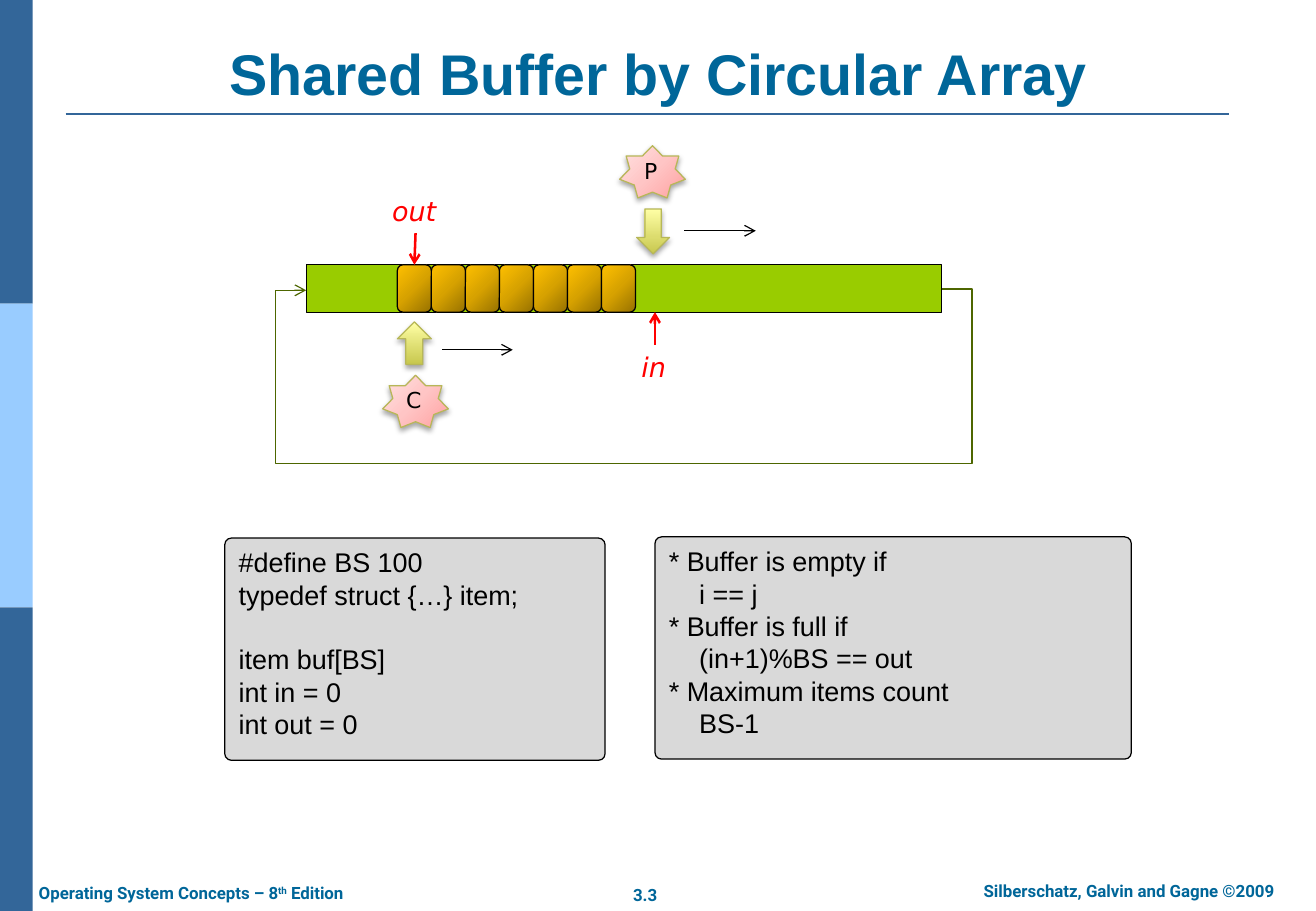
import pptx
import pptx.util
import pptx.dml.color
import pptx.enum.shapes
import pptx.enum.text
import pptx.oxml
import pptx.oxml.ns

Inches, Pt = pptx.util.Inches, pptx.util.Pt
RGB = pptx.dml.color.RGBColor.from_string
MSO = pptx.enum.shapes.MSO_SHAPE
CONN = pptx.enum.shapes.MSO_CONNECTOR
ALIGN = pptx.enum.text.PP_ALIGN
ANCHOR = pptx.enum.text.MSO_ANCHOR
FIT = pptx.enum.text.MSO_AUTO_SIZE
qn = pptx.oxml.ns.qn

THEME = {
    "navy": "336699", "sky": "99CCFF", "buffer": "99CC00", "panel": "D9D9D9",
    "black": "000000", "loop": "4D6600", "olive": "B7B758", "red": "FF0000",
    # Gradients: counter-clockwise angle, then (position, colour) stops
    "pink": (135, [(0, "FFA0A0"), (50, "FFC5C5"), (100, "FFE3E3")]),
    "lime": (90, [(0, "C7C74E"), (100, "FFFFA5")]),
    "gold": (135, [(0, "977200"), (50, "D7A200"), (100, "FFC000")]),
    "title": ({"name": "Arial", "size": Pt(34), "bold": True}, "006699"),
    "footer": ({"name": "Roboto", "size": Pt(10), "bold": True}, "006699"),
    "actor": ({"name": "DejaVu Sans", "size": Pt(13)}, "000000"),
    "index": ({"name": "DejaVu Sans", "size": Pt(16), "italic": True}, "FF0000"),
    "code": ({"name": "Arial", "size": Pt(16)}, "000000"),
}

prs = pptx.Presentation()
prs.slide_width, prs.slide_height = Inches(10.83), Inches(7.5)
s = prs.slides.add_slide(prs.slide_layouts[5])


def add_shape(kind, at, fill, line=None, shadow=False):
    sp = s.shapes.add_shape(kind, *map(Inches, at))
    sp.shadow.inherit = False
    paint = THEME[fill]
    if isinstance(paint, tuple):
        sp.fill.gradient()
        sp.fill.gradient_angle = paint[0]
        stops = sp._element.spPr.find(".//" + qn("a:gsLst"))
        for old in list(stops):
            stops.remove(old)
        for pos, color in paint[1]:
            gs = pptx.oxml.ns and stops.makeelement(qn("a:gs"), {"pos": str(pos * 1000)})
            gs.append(gs.makeelement(qn("a:srgbClr"), {"val": color}))
            stops.append(gs)
    else:
        sp.fill.solid()
        sp.fill.fore_color.rgb = RGB(paint)
    if line:
        sp.line.color.rgb = RGB(THEME[line])
        sp.line.width = Pt(0.75)
    else:
        sp.line.fill.background()
    if shadow:
        sp._element.spPr.find(qn("a:effectLst")).append(pptx.oxml.parse_xml(
            '<a:outerShdw xmlns:a="http://schemas.openxmlformats.org/drawingml/2006/main" '
            'blurRad="39000" dist="23000" dir="5400000" rotWithShape="0">'
            '<a:srgbClr val="000000"><a:alpha val="35000"/></a:srgbClr></a:outerShdw>'))
    return sp


def write_text(sp, lines, style, align=ALIGN.LEFT, **frame):
    """Write lines; text between ^ marks is superscript."""
    tf = sp.text_frame
    for key, value in frame.items():
        setattr(tf, key, value)
    font, color = THEME[style]
    for i, line in enumerate(lines):
        p = tf.paragraphs[0] if i == 0 else tf.add_paragraph()
        p.alignment = align
        for j, text in enumerate(line.split("^")):
            r = p.add_run()
            r.text = text
            for key, value in font.items():
                setattr(r.font, key, value)
            r.font.color.rgb = RGB(color)
            if j % 2:
                r.font._element.set("baseline", "30000")
    return tf


# Side band
for i, color in enumerate(["navy", "sky", "navy"]):
    add_shape(MSO.RECTANGLE, (0, 2.5 * i, 0.27, 2.5), color)

# Title
title = s.shapes.title
title.left, title.top, title.width, title.height = map(Inches, (0.54, 0.3, 9.75, 0.63))
write_text(title, ["Shared Buffer by Circular Array"], "title", ALIGN.CENTER,
           vertical_anchor=ANCHOR.BOTTOM, auto_size=FIT.NONE)

# Footer and index labels
for at, text, style, align in [
    ((0.22, 7.22, 2.91, 0.28), "Operating System Concepts – 8^th^ Edition", "footer", ALIGN.LEFT),
    ((5.06, 7.23, 0.5, 0.28), "3.3", "footer", ALIGN.CENTER),
    ((7.75, 7.2, 3.08, 0.28), "Silberschatz, Galvin and Gagne ©2009", "footer", ALIGN.CENTER),
    ((5.18, 2.84, 0.41, 0.37), "in", "index", ALIGN.LEFT),
    ((3.13, 1.55, 0.57, 0.37), "out", "index", ALIGN.LEFT),
]:
    tb = s.shapes.add_textbox(*map(Inches, at))
    write_text(tb, [text], style, align, word_wrap=False)

# Buffer with its filled cells
add_shape(MSO.RECTANGLE, (2.52, 2.18, 5.23, 0.39), "buffer", "black")
for i in range(7):
    add_shape(MSO.ROUNDED_RECTANGLE, (3.27 + 0.28 * i, 2.18, 0.28, 0.39), "gold", "black")

# Producer and consumer
for name, left, top, arrow, arrow_at in [
    ("P", 5.1, 1.2, MSO.DOWN_ARROW, (5.24, 1.72, 0.27, 0.37)),
    ("C", 3.15, 3.09, MSO.UP_ARROW, (3.27, 2.65, 0.28, 0.35)),
]:
    star = add_shape(MSO.STAR_7_POINT, (left, top, 0.54, 0.43), "pink", "olive", True)
    write_text(star, [name], "actor", ALIGN.CENTER, word_wrap=False,
               vertical_anchor=ANCHOR.MIDDLE, margin_left=Inches(0.04),
               margin_right=Inches(0.07), margin_top=Inches(0.04), margin_bottom=Inches(0.04))
    add_shape(arrow, arrow_at, "lime", "olive", True)

# Title rule, direction arrows, index arrows and the wrap-around loop
for kind, ends, color, width, arrow in [
    (CONN.STRAIGHT, (0.54, 0.94, 10.11, 0.94), "navy", 1.5, False),
    (CONN.STRAIGHT, (5.63, 1.9, 6.22, 1.9), "black", 0.75, True),
    (CONN.STRAIGHT, (3.64, 2.88, 4.22, 2.88), "black", 0.75, True),
    (CONN.STRAIGHT, (5.39, 2.84, 5.39, 2.57), "red", 1.5, True),
    (CONN.STRAIGHT, (3.42, 1.92, 3.41, 2.18), "red", 1.5, True),
    (CONN.ELBOW, (7.75, 2.38, 2.52, 2.39), "loop", 0.75, True),
]:
    c = s.shapes.add_connector(kind, *map(Inches, ends))
    c.line.color.rgb = RGB(THEME[color])
    c.line.width = Pt(width)
    spPr = c._element.spPr
    if arrow:
        ln = spPr.find(qn("a:ln"))
        ln.append(ln.makeelement(qn("a:tailEnd"), {"type": "arrow"}))
    spPr.append(spPr.makeelement(qn("a:effectLst"), {}))
    if kind == CONN.ELBOW:
        geom = spPr.find(qn("a:prstGeom"))
        geom.set("prst", "bentConnector5")
        guides = geom.find(qn("a:avLst"))
        # Bends: 0.25 right of the start, 1.46 below it, 0.25 left of the end
        for i, ratio in enumerate([-0.25 / 5.23, 1.46 / 0.01, 1 + 0.25 / 5.23], 1):
            guides.append(guides.makeelement(
                qn("a:gd"), {"name": f"adj{i}", "fmla": f"val {round(ratio * 100000)}"}))

# Code and rule panels
panels = []
for at, lines in [
    ((1.85, 4.43, 3.13, 1.83),
     ["#define BS 100", "typedef struct {…} item;", "item buf[BS]", "int in = 0", "int out = 0"]),
    ((5.39, 4.42, 3.92, 1.83),
     ["* Buffer is empty if", "i == j", "* Buffer is full if", "(in+1)%BS == out",
      "* Maximum items count", "BS-1"]),
]:
    sp = add_shape(MSO.ROUNDED_RECTANGLE, at, "panel", "black")
    sp.adjustments[0] = 0.03
    panels.append(write_text(sp, lines, "code", word_wrap=True, vertical_anchor=ANCHOR.TOP))

code, rules = panels
code.paragraphs[2].space_before = Pt(19)
for p in rules.paragraphs[1::2]:
    p._p.get_or_add_pPr().set("marL", str(Inches(0.25)))

prs.save("out.pptx")
